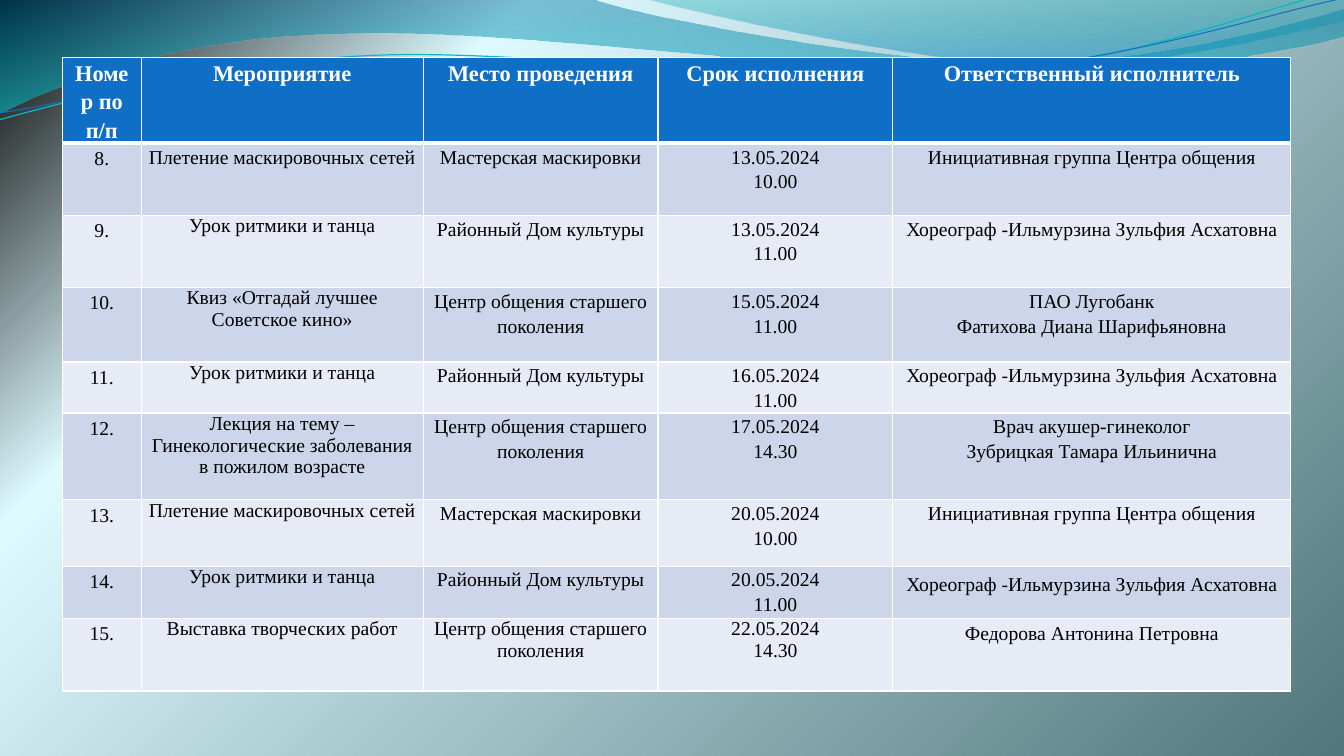
from math import cos, radians, sin
from lxml import etree
from pptx import Presentation
from pptx.dml.color import RGBColor
from pptx.enum.text import PP_ALIGN
from pptx.oxml import parse_xml
from pptx.oxml.ns import nsdecls, qn
from pptx.util import Inches, Pt

WHITE = RGBColor(0xFF, 0xFF, 0xFF)
BLACK = RGBColor(0, 0, 0)
BLUE = RGBColor(0x0F, 0x6F, 0xC6)
CYAN = RGBColor(0x0A, 0xB8, 0xBF)
ABYSS = RGBColor(0x00, 0x74, 0xA1)
TEAL = RGBColor(0x00, 0xC6, 0xCF)
SEA = RGBColor(0x00, 0xA1, 0xA9)
AZURE = RGBColor(0x00, 0x8B, 0xBF)
ICE = RGBColor(0xDD, 0xFA, 0xFF)
SLATE = RGBColor(0x52, 0x76, 0x7C)
DARK = RGBColor(0xCC, 0xD5, 0xEA)
PALE = RGBColor(0xE7, 0xEB, 0xF5)
FONT = "Times New Roman"
GRID = 13.33
TILT = -2.7

DOWN = '<a:lin ang="5400000" scaled="0"/>'
ROUND = '<a:path path="circle"><a:fillToRect r="100000" b="100000"/></a:path>'

RIBBON = [[(-0.01, 0)], [(5.87, -0.01)],
          [(6.34, 0.17), (8.85, 0.63), (10.11, 0.63)],
          [(11.38, 0.63), (12.78, 0.26), (13.33, 0.09)], [(13.35, 0.36)],
          [(13.11, 0.44), (11.6, 0.76), (9.94, 0.75)],
          [(8.29, 0.75), (5.09, 0.28), (3.43, 0.34)],
          [(1.72, 0.36), (0.61, 0.83), (-0.01, 1.13)]]
CREST = [[(6.39, -0.01)],
         [(6.79, 0.11), (9.09, 0.62), (10.25, 0.65)],
         [(11.41, 0.69), (12.82, 0.32), (13.33, 0.21)], [(13.33, 0)]]
UPPER = [[(-0.01, 1.19)],
         [(0.64, 1.01), (2.11, 0.62), (3.69, 0.55)],
         [(5.27, 0.48), (7.9, 0.87), (9.5, 0.76)],
         [(11.1, 0.66), (12.52, 0.08), (13.31, -0.1)]]
LOWER = [[(0, 1.12)],
         [(0.63, 1.03), (2.18, 0.66), (3.78, 0.59)],
         [(5.37, 0.53), (7.96, 0.82), (9.55, 0.72)],
         [(11.15, 0.62), (12.55, 0.14), (13.34, -0.02)]]

COLS = [78, 280, 233, 233, 395]
ROWS = [85, 71.5, 71.5, 74, 50.5, 86, 66, 52, 72]
HEAD = ["Номер по п/п", "Мероприятие", "Место проведения",
        "Срок исполнения", "Ответственный исполнитель"]
DANCE = "Урок ритмики и танца"
NETS = "Плетение маскировочных сетей"
HOUSE = "Районный Дом культуры"
SHOP = "Мастерская маскировки"
CLUB = "Центр общения старшего поколения"
TEAM = "Инициативная группа Центра общения"
COACH = "Хореограф -Ильмурзина Зульфия Асхатовна"
PLAN = [
    ["8.", NETS, SHOP, "13.05.2024\n10.00", TEAM],
    ["9.", DANCE, HOUSE, "13.05.2024\n11.00", COACH],
    ["10.", "Квиз «Отгадай лучшее Советское кино»", CLUB, "15.05.2024\n11.00",
     "ПАО Лугобанк\nФатихова Диана Шарифьяновна"],
    ["11.", DANCE, HOUSE, "16.05.2024\n11.00", COACH],
    ["12.", "Лекция на тему –Гинекологические заболевания в пожилом возрасте",
     CLUB, "17.05.2024\n14.30",
     "Врач акушер-гинеколог\nЗубрицкая Тамара Ильинична"],
    ["13.", NETS, SHOP, "20.05.2024\n10.00", TEAM],
    ["14.", DANCE, HOUSE, "20.05.2024\n11.00", COACH],
    ["15.", "Выставка творческих работ", CLUB, "22.05.2024\n14.30",
     "Федорова Антонина Петровна"],
]


def blend(fill, root, stops, shade):
    fill.gradient()
    marks = "".join(
        f'<a:gs pos="{pos * 1000}"><a:srgbClr val="{color}">'
        f'<a:alpha val="{alpha * 1000}"/></a:srgbClr></a:gs>'
        for pos, color, alpha in stops)
    old = root.find(".//" + qn("a:gradFill"))
    new = parse_xml(f'<a:gradFill {nsdecls("a")} rotWithShape="1">'
                    f'<a:gsLst>{marks}</a:gsLst>{shade}</a:gradFill>')
    old.getparent().replace(old, new)


def turn(points, angle):
    xs, ys = zip(*points)
    midx, midy = (min(xs) + max(xs)) / 2, (min(ys) + max(ys)) / 2
    c, s = cos(radians(angle)), sin(radians(angle))
    return [(midx + (x - midx) * c - (y - midy) * s,
             midy + (x - midx) * s + (y - midy) * c) for x, y in points]


def bend(shape, route):
    lines = iter(list(shape.element.iter(qn("a:lnTo"))))
    for part in route[1:]:
        group = [next(lines) for _ in part]
        if len(part) == 3:
            arc = etree.Element(qn("a:cubicBezTo"))
            group[0].addprevious(arc)
            for line in group:
                arc.append(line[0])
                line.getparent().remove(line)


def curve(slide, box, route, close, tilt=0):
    left, top, width, _ = box
    unit = width / GRID
    flat = turn([point for part in route for point in part], -tilt)
    points = [(left + x * unit, top + y * unit) for x, y in flat]
    pen = slide.shapes.build_freeform(*points[0])
    pen.add_line_segments(points[1:], close=close)
    shape = pen.convert_to_shape()
    bend(shape, route)
    shape.rotation = tilt
    shape.shadow.inherit = False
    return shape


def waves(slide, box):
    for route, stops in ((RIBBON, [(0, ABYSS, 45), (100, TEAL, 55)]),
                         (CREST, [(0, SEA, 30), (80, AZURE, 45)])):
        shape = curve(slide, box, route, True)
        blend(shape.fill, shape.element, stops, DOWN)
        shape.line.fill.background()
    for route, color, weight in ((UPPER, CYAN, 0.85), (LOWER, BLUE, 0.75)):
        shape = curve(slide, box, route, False, TILT)
        shape.fill.background()
        shape.line.color.rgb = color
        shape.line.width = Pt(weight)


def border(cell, head):
    props = cell._tc.get_or_add_tcPr()
    for i, side in enumerate(("lnL", "lnR", "lnT", "lnB")):
        heavy = head and side == "lnB"
        line = etree.Element(qn("a:" + side), w=str(Pt(3 if heavy else 1)))
        paint = etree.SubElement(line, qn("a:solidFill"))
        etree.SubElement(paint, qn("a:srgbClr"), val=str(WHITE))
        props.insert(i, line)


def entry(cell, text, row, col):
    head, last = row == 0, row == len(PLAN)
    roomy = (col == 0 and not head) or (col == 4 and row >= len(PLAN) - 1)
    loose = head or (not last and (col > 1 or (col == 1 and row == 1)))
    if not roomy:
        cell.margin_left = cell.margin_right = Inches(0.07)
        cell.margin_top = cell.margin_bottom = 0
    cell.fill.solid()
    cell.fill.fore_color.rgb = BLUE if head else DARK if row % 2 else PALE
    border(cell, head)
    cell.text_frame.text = text
    for para in cell.text_frame.paragraphs:
        para.alignment = PP_ALIGN.CENTER
        if loose:
            para.line_spacing = 1.15
        for run in para.runs:
            run.font.name = FONT
            run.font.size = Pt(16 if head else 14)
            run.font.bold = head
            run.font.color.rgb = WHITE if head else BLACK


def agenda(slide, box):
    left, top, width, height = box
    table = slide.shapes.add_table(len(ROWS), len(COLS), *box).table
    for column, share in zip(table.columns, COLS):
        column.width = int(width * share / sum(COLS))
    for line, share in zip(table.rows, ROWS):
        line.height = int(height * share / sum(ROWS))
    for row, texts in enumerate([HEAD, *PLAN]):
        for col, text in enumerate(texts):
            entry(table.cell(row, col), text, row, col)


def main():
    deck = Presentation()
    wide, high = Inches(GRID), Inches(7.5)
    deck.slide_width, deck.slide_height = wide, high
    slide = deck.slides.add_slide(deck.slide_layouts[6])
    blend(slide.background.fill, slide.element,
          [(0, BLACK, 100), (25, ICE, 100), (100, SLATE, 100)], ROUND)
    waves(slide, (0, 0, wide, high))
    agenda(slide, (Inches(0.62), Inches(0.57),
                   int(wide * 0.914), int(high * 0.838)))
    deck.save("out.pptx")


if __name__ == "__main__":
    main()
